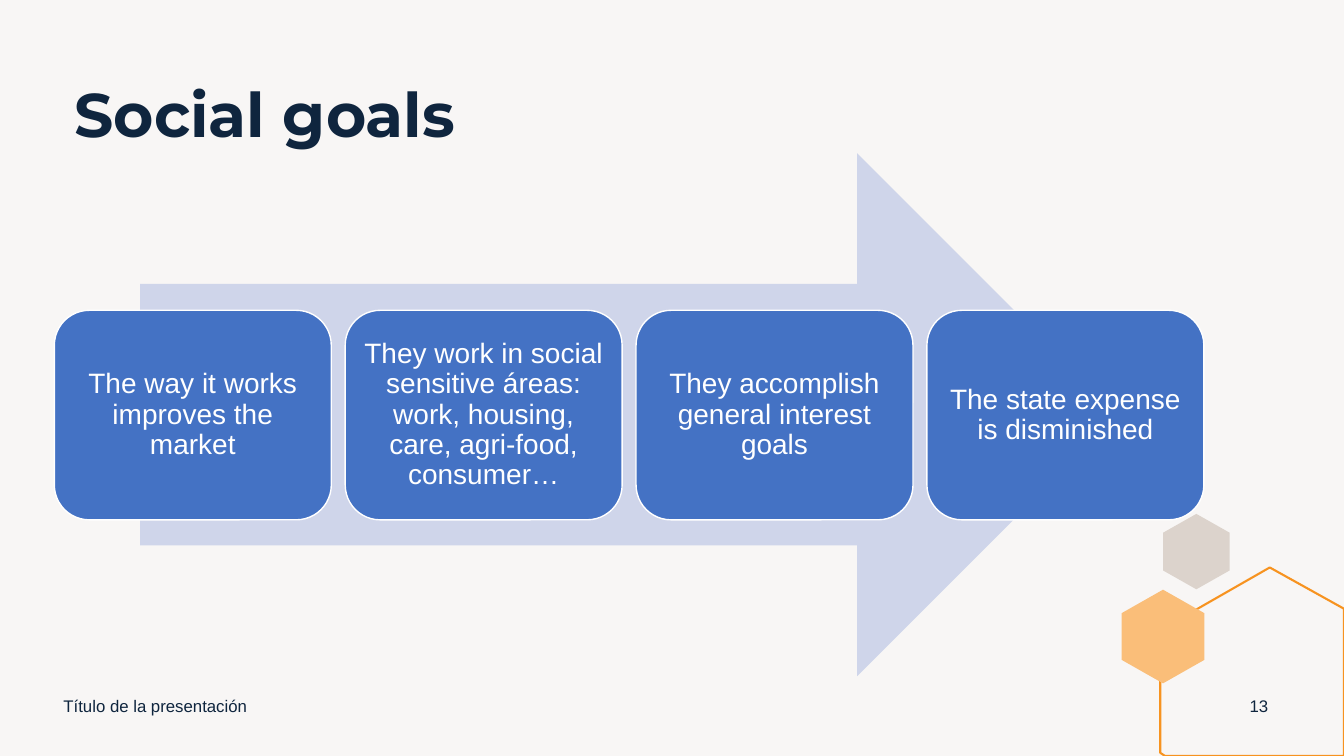
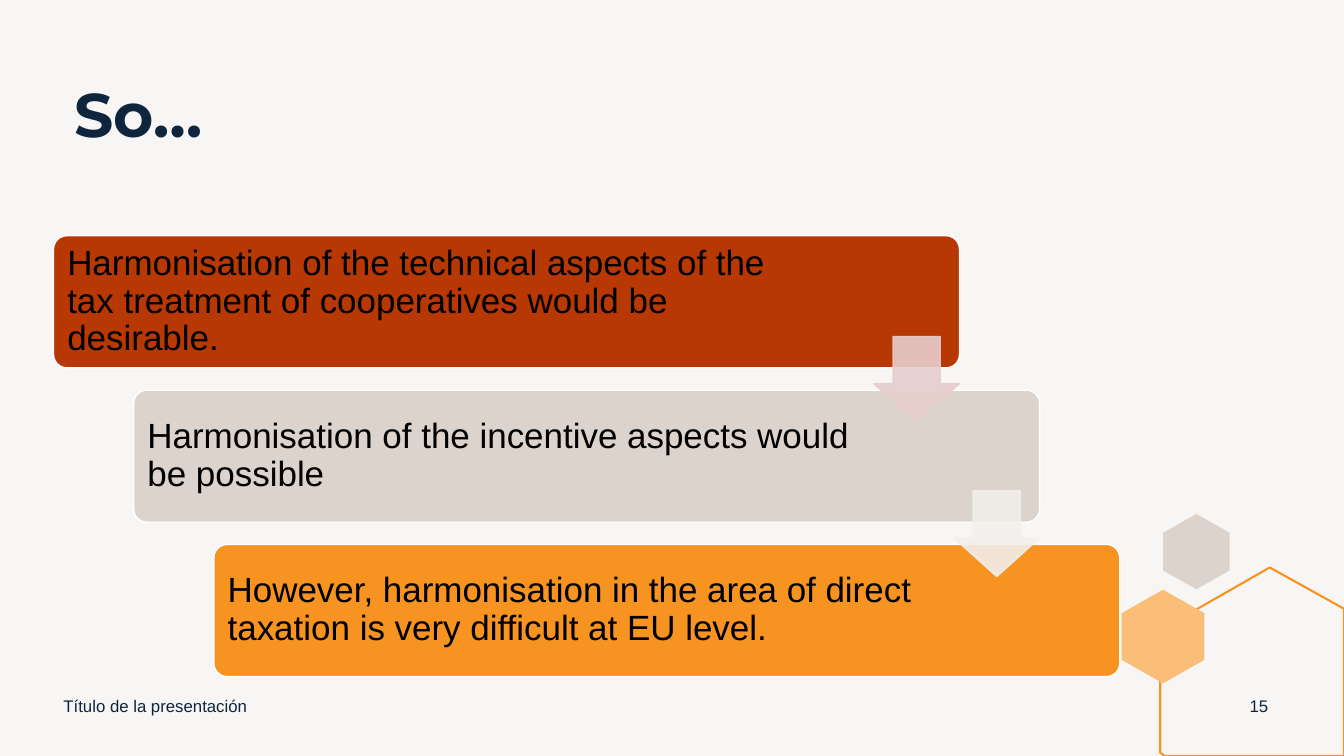
from lxml.etree import SubElement as Sub
from pptx import Presentation as Deck
from pptx.dml.color import RGBColor as Rgb
from pptx.enum.shapes import MSO_SHAPE as Kind
from pptx.enum.text import MSO_ANCHOR as Anchor, PP_ALIGN as Align
from pptx.oxml.ns import qn
from pptx.util import Cm, Pt

HUES = {
    "paper": "F8F6F5", "navy": "0F253E", "white": "FFFFFF", "black": "000000",
    "sand": "DCD3CC", "orange": "F79320", "peach": "FABE79",
    "pale": "CFD5EA", "blue": "4472C4", "rust": "B83803",
    "rose": "E6CECC", "mist": "F2EFEC",
}

# Text styles: font values, paragraph values, frame values, colour
STYLES = {
    "title": ({"name": "Montserrat", "size": Pt(44), "bold": True},
              {"line_spacing": 0.9, "alignment": Align.LEFT},
              {"vertical_anchor": Anchor.TOP}, "navy"),
    "foot": ({"name": "Arial", "size": Pt(12)},
             {"alignment": Align.LEFT},
             {"vertical_anchor": Anchor.MIDDLE}, "navy"),
    "page": ({"name": "Arial", "size": Pt(12)},
             {"alignment": Align.CENTER},
             {"vertical_anchor": Anchor.MIDDLE}, "navy"),
    "card": ({"name": "Arial", "size": Pt(20)},
             {"line_spacing": 0.9, "alignment": Align.CENTER},
             {"vertical_anchor": Anchor.MIDDLE,
              "margin_left": Cm(0.2), "margin_right": Cm(0.2),
              "margin_top": Cm(0.2), "margin_bottom": Cm(0.2)}, "white"),
    "step": ({"name": "Arial", "size": Pt(25)},
             {"line_spacing": 0.9, "alignment": Align.LEFT},
             {"vertical_anchor": Anchor.MIDDLE, "margin_left": Cm(0.25),
              "margin_top": Cm(0.25), "margin_bottom": Cm(0.25)}, "black"),
}

WIDE, HIGH = 33.87, 19.05
FOOT = "Título de la presentación"

GOALS = [
    "The way it works improves the market",
    "They work in social sensitive áreas: work, housing, care, agri-food, "
    "consumer…",
    "They accomplish general interest goals",
    "The state expense is disminished",
]

# Step text, bar colour, right margin in cm
STEPS = [
    ("Harmonisation of the technical aspects of the tax treatment of "
     "cooperatives would be desirable.", "rust", 3.63),
    ("Harmonisation of the incentive aspects would be possible",
     "sand", 4.42),
    ("However, harmonisation in the area of direct taxation is very "
     "difficult at EU level.", "orange", 4.42),
]


def rgb(hue):
    return Rgb.from_string(HUES[hue])


def apply(item, values):
    for name, value in values.items():
        setattr(item, name, value)


def paint(shape, fill=None, line=None, width=1):
    shape.shadow.inherit = False
    for part, hue in ((shape.fill, fill), (shape.line.fill, line)):
        if hue:
            part.solid()
            part.fore_color.rgb = rgb(hue)
        else:
            part.background()
    if line:
        shape.line.width = Pt(width)


def write(shape, text, style):
    font, para, frame, hue = STYLES[style]
    body = shape.text_frame
    body.word_wrap = True
    apply(body, frame)
    line = body.paragraphs[0]
    apply(line, para)
    run = line.add_run()
    run.text = text
    apply(run.font, font)
    run.font.color.rgb = rgb(hue)


def label(slide, box, text, style):
    write(slide.shapes.add_textbox(*map(Cm, box)), text, style)


def block(slide, kind, box, fill, line=None, adjust=()):
    shape = slide.shapes.add_shape(kind, *map(Cm, box))
    for spot, value in enumerate(adjust):
        shape.adjustments[spot] = value
    paint(shape, fill, line)
    return shape


def fade(shape, percent):
    for node in list(shape.element.spPr.iter(qn("a:srgbClr"))):
        Sub(node, qn("a:alpha")).set("val", str(percent * 1000))


def outline(slide, dots, **look):
    first, *rest = [(Cm(x), Cm(y)) for x, y in dots]
    pen = slide.shapes.build_freeform(*first)
    pen.add_line_segments(rest, close=True)
    paint(pen.convert_to_shape(), **look)


def hexagon(slide, mid, top, wide, high, fill):
    left, right = mid - wide / 2, mid + wide / 2
    upper, lower = top + high / 4, top + high * 3 / 4
    outline(slide, [(mid, top), (right, upper), (right, lower),
                    (mid, top + high), (left, lower), (left, upper)],
            fill=fill)


# Background, hexagons, title and footer of every slide
def start(deck, title, page):
    slide = deck.slides.add_slide(deck.slide_layouts[6])
    back = slide.background.fill
    back.solid()
    back.fore_color.rgb = rgb("paper")
    hexagon(slide, 30.15, 12.95, 1.68, 1.9, "sand")
    outline(slide, [(32, 14.3), (WIDE, 15.34), (WIDE, HIGH), (29.36, HIGH),
                    (29.24, 18.97), (29.24, 15.88)],
            line="orange", width=1.5)
    hexagon(slide, 29.31, 14.86, 2.08, 2.36, "peach")
    label(slide, (1.63, 2.01, 30.25, 3.94), title, "title")
    label(slide, (1.35, 17.27, 11.43, 1.02), FOOT, "foot")
    label(slide, (31.09, 17.27, 1.27, 1.02), str(page), "page")
    return slide


# Row of cards on a wide arrow
def goals(slide):
    block(slide, Kind.RIGHT_ARROW, (3.53, 3.86, 24.66, 13.18), "pale")
    for col, text in enumerate(GOALS):
        box = (1.37 + col * 7.33, 7.82, 6.98, 5.28)
        card = block(slide, Kind.ROUNDED_RECTANGLE, box, "blue", "white")
        write(card, text, "card")


# Staircase of bars, with arrows leading down
def steps(slide):
    wide, high, size = 22.83, 3.33, 2.16
    spots = [(1.35 + row * 2.02, 5.94 + row * 3.89)
             for row in range(len(STEPS))]
    for (left, top), (text, hue, gap) in zip(spots, STEPS):
        bar = block(slide, Kind.ROUNDED_RECTANGLE, (left, top, wide, high),
                    hue, "white", (0.1,))
        write(bar, text, "step")
        bar.text_frame.margin_right = Cm(gap)
    for (left, top), hue in zip(spots, ("rose", "mist")):
        box = (left + wide - size, top + 2.54, size, size)
        arrow = block(slide, Kind.DOWN_ARROW, box, hue, hue, (0.55, 0.45))
        fade(arrow, 90)


def main():
    deck = Deck()
    apply(deck, {"slide_width": Cm(WIDE), "slide_height": Cm(HIGH)})
    goals(start(deck, "Social goals", 13))
    steps(start(deck, "So…", 15))
    deck.save("out.pptx")


if __name__ == "__main__":
    main()
